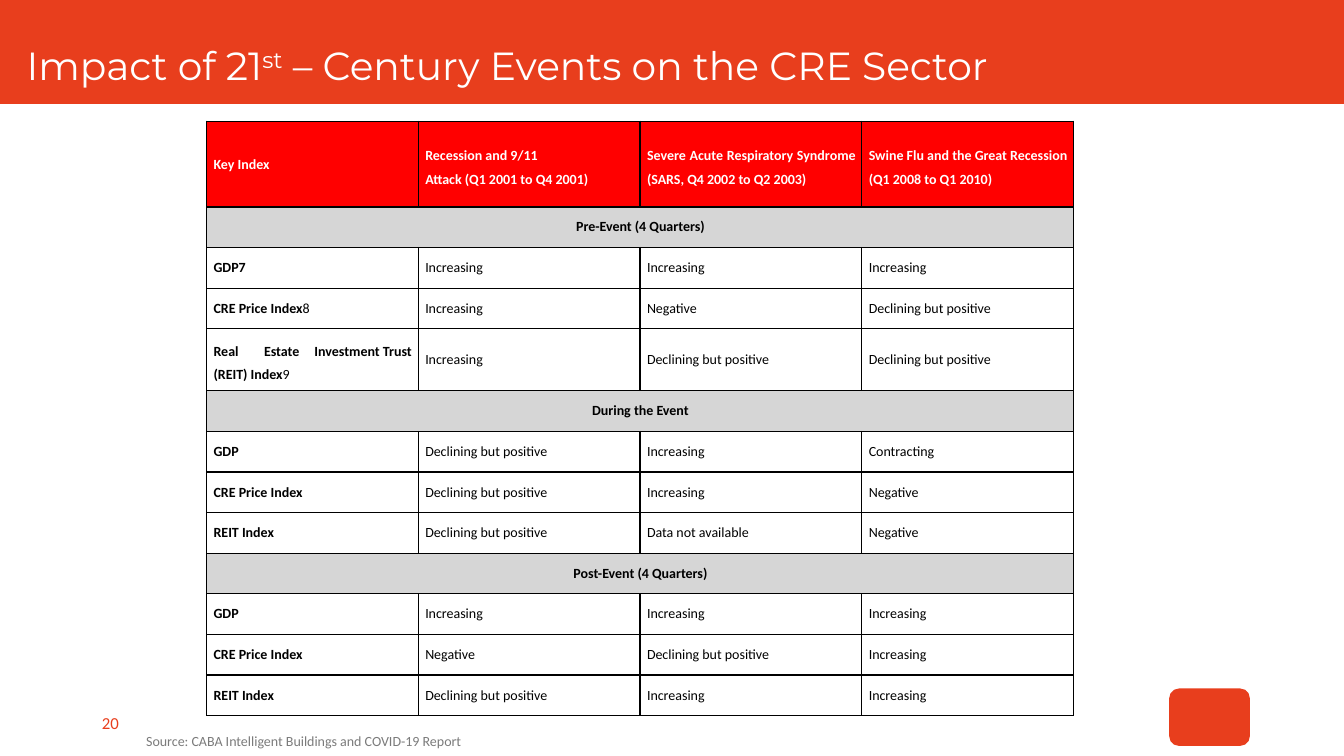
from dataclasses import dataclass

from lxml import etree
from pptx import Presentation
from pptx import util as u
from pptx.dml.color import RGBColor
from pptx.enum import shapes, text
from pptx.oxml import ns


@dataclass(frozen=True)
class Theme:
    brand: str = "E83E1D"
    header: str = "FF0000"
    section: str = "D6D6D6"
    light: str = "FFFFFF"
    ink: str = "000000"
    muted: str = "7B7B7B"
    heading_font: str = "Montserrat"
    body_font: str = "Calibri"
    heading_size: int = 28
    number_size: int = 12
    body_size: int = 10


def write(paragraph, wording, *, size, color, font, bold=False, raised=False):
    for index, line in enumerate(wording.split("\n")):
        if index:
            paragraph.add_line_break()
        run = paragraph.add_run()
        run.text = line
        run.font.size = u.Pt(size)
        run.font.name = font
        run.font.bold = bold
        run.font.color.rgb = RGBColor.from_string(color)
        if raised:
            run._r.get_or_add_rPr().set("baseline", "30000")


class SlideBuilder:
    def __init__(self, slide, theme):
        self.slide = slide
        self.theme = theme

    def block(self, left, top, width, height, kind=shapes.MSO_SHAPE.RECTANGLE):
        block = self.slide.shapes.add_shape(
            kind, u.Pt(left), u.Pt(top), u.Pt(width), u.Pt(height))
        block.shadow.inherit = False
        block.fill.solid()
        block.fill.fore_color.rgb = RGBColor.from_string(self.theme.brand)
        block.line.fill.background()

    def label(self, left, top, width, height, pieces, spacing=1.0, **style):
        frame = self.slide.shapes.add_textbox(
            u.Pt(left), u.Pt(top), u.Pt(width), u.Pt(height)).text_frame
        frame.word_wrap = True
        frame.margin_left = frame.margin_right = 0
        frame.margin_top = frame.margin_bottom = 0
        paragraph = frame.paragraphs[0]
        paragraph.line_spacing = spacing
        for wording, raised in pieces:
            write(paragraph, wording, raised=raised, **style)

    def outline(self, cell):
        properties = cell._tc.get_or_add_tcPr()
        for side in ("lnL", "lnR", "lnT", "lnB"):
            edge = etree.SubElement(properties, ns.qn(f"a:{side}"), w=str(u.Pt(1)))
            paint = etree.SubElement(edge, ns.qn("a:solidFill"))
            etree.SubElement(paint, ns.qn("a:srgbClr"), val=self.theme.ink)

    def cell(self, cell, wording, note="", fill=None, color=None, bold=False,
             align=text.PP_ALIGN.LEFT, spacing=1.0):
        cell.margin_left, cell.margin_right = u.Pt(5), u.Pt(4.5)
        cell.margin_top = cell.margin_bottom = 0
        cell.vertical_anchor = text.MSO_ANCHOR.MIDDLE
        self.outline(cell)
        if fill:
            cell.fill.solid()
            cell.fill.fore_color.rgb = RGBColor.from_string(fill)
        else:
            cell.fill.background()
        paragraph = cell.text_frame.paragraphs[0]
        paragraph.alignment = align
        paragraph.line_spacing = spacing
        style = dict(size=self.theme.body_size, font=self.theme.body_font,
                     color=color or self.theme.ink)
        write(paragraph, wording, bold=bold, **style)
        if note:
            write(paragraph, note, **style)

    def table(self, left, top, widths, heights, headings, rows):
        grid = self.slide.shapes.add_table(
            len(heights), len(widths), u.Pt(left), u.Pt(top),
            u.Pt(sum(widths)), u.Pt(sum(heights))).table
        grid.first_row = grid.horz_banding = False
        for column, width in zip(grid.columns, widths):
            column.width = u.Pt(width)
        for row, height in zip(grid.rows, heights):
            row.height = u.Pt(height)
        for index, (wording, align, spacing) in enumerate(headings):
            self.cell(grid.cell(0, index), wording, fill=self.theme.header,
                      color=self.theme.light, bold=True, align=align, spacing=spacing)
        for number, (name, *trends) in enumerate(rows, 1):
            first = grid.cell(number, 0)
            if not trends:
                first.merge(grid.cell(number, len(widths) - 1))
                self.cell(first, name, fill=self.theme.section, bold=True,
                          align=text.PP_ALIGN.CENTER)
                for index in range(1, len(widths)):
                    self.outline(grid.cell(number, index))
                continue
            index_name, _, note = name.partition("^")
            self.cell(first, index_name, note, bold=True,
                      spacing=1.36 if "\t" in name else 1.0)
            for index, trend in enumerate(trends, 1):
                self.cell(grid.cell(number, index), trend)


UP, SLOWING, DOWN = "Increasing", "Declining but positive", "Negative"
HEADINGS = [
    ("Key Index", text.PP_ALIGN.LEFT, 1.09),
    ("Recession and 9/11\nAttack (Q1 2001 to Q4 2001)", text.PP_ALIGN.LEFT, 1.45),
    ("Severe Acute Respiratory Syndrome (SARS, Q4 2002 to Q2 2003)",
     text.PP_ALIGN.JUSTIFY, 1.45),
    ("Swine Flu and the Great Recession (Q1 2008 to Q1 2010)",
     text.PP_ALIGN.JUSTIFY, 1.45),
]
ROWS = [
    ("Pre-Event (4 Quarters)",),
    ("GDP7", UP, UP, UP),
    ("CRE Price Index^8", UP, DOWN, SLOWING),
    ("Real\tEstate\tInvestment Trust (REIT) Index^9", UP, SLOWING, SLOWING),
    ("During the Event",),
    ("GDP", SLOWING, UP, "Contracting"),
    ("CRE Price Index", SLOWING, UP, DOWN),
    ("REIT Index", SLOWING, "Data not available", DOWN),
    ("Post-Event (4 Quarters)",),
    ("GDP", UP, UP, UP),
    ("CRE Price Index", DOWN, SLOWING, UP),
    ("REIT Index", SLOWING, UP, UP),
]


def main():
    deck = Presentation()
    deck.slide_width, deck.slide_height = u.Pt(960), u.Pt(540)
    theme = Theme()
    page = SlideBuilder(deck.slides.add_slide(deck.slide_layouts[6]), theme)

    page.block(0, 0, 960, 74.3)
    page.block(835.2, 491.8, 57.6, 41, shapes.MSO_SHAPE.ROUNDED_RECTANGLE)
    page.label(19, 29.5, 828, 35.3,
               [("Impact of 21", False), ("st", True),
                (" – Century Events on the CRE Sector", False)],
               size=theme.heading_size, color=theme.light, font=theme.heading_font)
    page.label(72.7, 508.3, 18, 13.7, [("20", False)], spacing=1.03,
               size=theme.number_size, color=theme.brand, font=theme.body_font)
    page.label(104.4, 522.7, 268.6, 11.5,
               [("Source: CABA Intelligent Buildings and COVID-19 Report", False)],
               spacing=1.04, size=theme.body_size, color=theme.muted,
               font=theme.body_font)
    heights = [61.2] + [44.4 if "\t" in row[0] else 29 for row in ROWS]
    page.table(147.6, 86.6, [151.2, 158.4, 158.4, 151.2], heights, HEADINGS, ROWS)

    deck.save("out.pptx")


if __name__ == "__main__":
    main()
